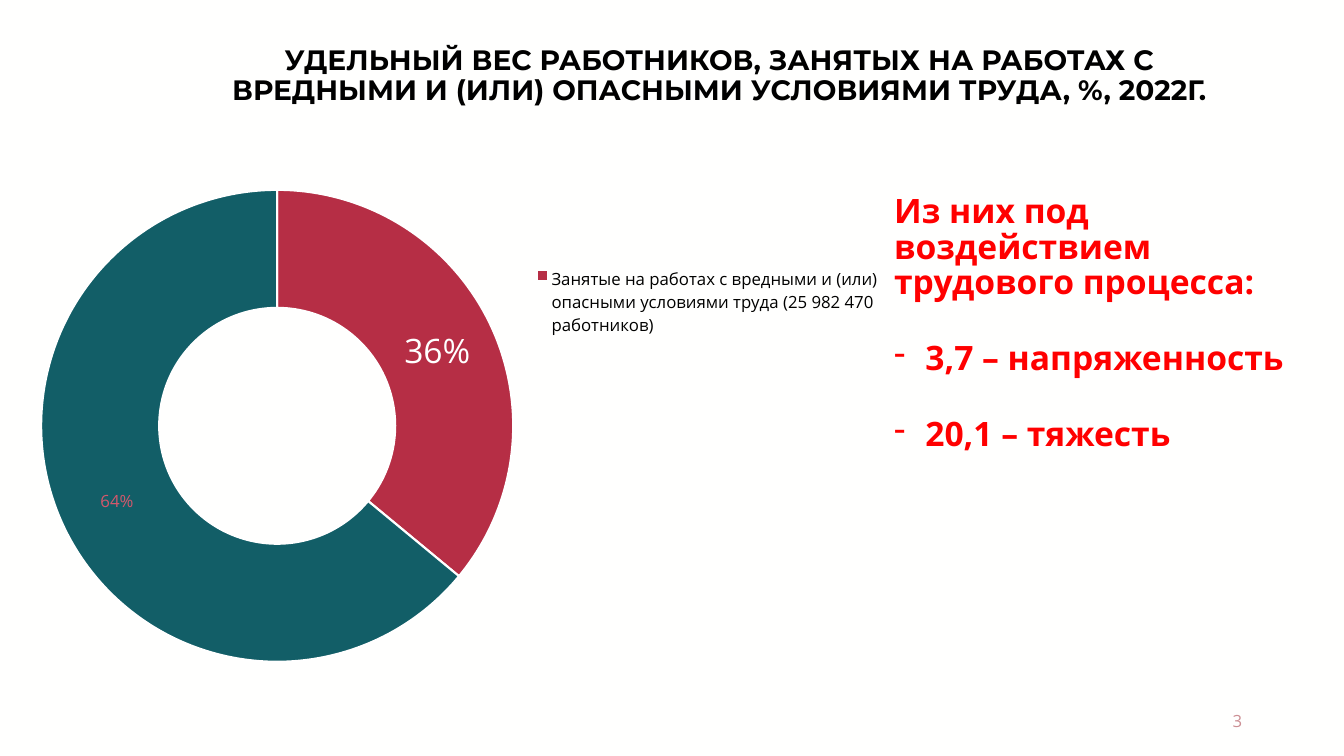
from lxml import etree
from pptx import Presentation
from pptx.chart.data import CategoryChartData
from pptx.dml.color import RGBColor
from pptx.enum.chart import XL_CHART_TYPE, XL_LEGEND_POSITION
from pptx.enum.text import MSO_ANCHOR, PP_ALIGN
from pptx.oxml import parse_xml
from pptx.oxml.ns import nsdecls, qn
from pptx.util import Inches, Pt

BACKGROUND = RGBColor(0xFF, 0xFF, 0xFE)
BLACK = RGBColor(0, 0, 0)
WHITE = RGBColor(0xFF, 0xFF, 0xFF)
RED = RGBColor(0xFF, 0, 0)
CRIMSON = RGBColor(0xB6, 0x2E, 0x45)
TEAL = RGBColor(0x12, 0x5E, 0x67)
ROSE = RGBColor(0xD4, 0x58, 0x6C)
PALE_ROSE = RGBColor(0xCC, 0x8F, 0x94)
BODY_FONT = "Open Sans"


def style(font, size, color, name=BODY_FONT, bold=False):
    font.size, font.name, font.bold = Pt(size), name, bold
    font.color.rgb = color


def chart_layout(x, y, w, h, inner=False):
    target = '<c:layoutTarget val="inner"/>' if inner else ""
    return parse_xml(
        f'<c:layout {nsdecls("c")}><c:manualLayout>{target}'
        '<c:xMode val="edge"/><c:yMode val="edge"/>'
        f'<c:x val="{x}"/><c:y val="{y}"/><c:w val="{w}"/><c:h val="{h}"/>'
        '</c:manualLayout></c:layout>')


prs = Presentation()
prs.slide_width, prs.slide_height = Inches(13.33), Inches(7.5)
slide = prs.slides.add_slide(prs.slide_layouts[5])
slide.background.fill.solid()
slide.background.fill.fore_color.rgb = BACKGROUND

# Title
title = slide.shapes.title
title.left, title.top = Inches(1.86), Inches(0.41)
title.width, title.height = Inches(10.55), Inches(0.67)
title.text_frame.text = ("УДЕЛЬНЫЙ ВЕС РАБОТНИКОВ, ЗАНЯТЫХ НА РАБОТАХ С ВРЕДНЫМИ "
                         "И (ИЛИ) ОПАСНЫМИ УСЛОВИЯМИ ТРУДА, %, 2022Г.")
title.text_frame.vertical_anchor = MSO_ANCHOR.TOP
heading = title.text_frame.paragraphs[0]
heading.alignment = PP_ALIGN.CENTER
heading.line_spacing = 0.9
style(heading.font, 20, BLACK, "Montserrat", True)

# Doughnut of worker shares
shares = CategoryChartData()
shares.categories = ["Занятые на работах с вредными и (или) опасными условиями "
                     "труда (25 982 470 работников)", ""]
shares.add_series("Series 1", (36, 64))
chart = slide.shapes.add_chart(
    XL_CHART_TYPE.DOUGHNUT, Inches(0.23), Inches(1.37),
    Inches(8.54), Inches(5.71), shares).chart
chart.has_title = False
style(chart.font, 10, CRIMSON)
plot = chart.plots[0]
plot.vary_by_categories = True
for hole in plot._element.iter(qn("c:holeSize")):
    hole.set("val", "50")
for index, color in enumerate((CRIMSON, TEAL)):
    sector = plot.series[0].points[index].format
    sector.fill.solid()
    sector.fill.fore_color.rgb = color
    sector.line.color.rgb = WHITE
    sector.line.width = Pt(1.5)

# Percent labels, the harmful share larger
labels = plot.series[0].data_labels
labels.show_percentage, labels.show_value = True, False
style(labels.font, 12, ROSE)
harmful_label = plot.series[0].points[0].data_label
style(harmful_label.font, 24, WHITE)
for tag, shown in (("c:showVal", "0"), ("c:showPercent", "1")):
    for flag in labels._element.iter(qn(tag)):
        flag.set("val", shown)

# Legend for the harmful share only
chart.has_legend = True
legend = chart.legend
legend.position = XL_LEGEND_POSITION.RIGHT
legend.include_in_layout = False
style(legend.font, 12, BLACK)
legend_position = legend._element.find(qn("c:legendPos"))
for layout in legend._element.findall(qn("c:layout")):
    legend._element.remove(layout)
legend_position.addnext(chart_layout(0.59, 0.21, 0.41, 0.15))
legend_position.addnext(parse_xml(
    f'<c:legendEntry {nsdecls("c")}><c:idx val="1"/><c:delete val="1"/></c:legendEntry>'))
plot_area = plot._element.getparent()
for layout in plot_area.findall(qn("c:layout")):
    plot_area.remove(layout)
plot_area.insert(0, chart_layout(0.02, 0.09, 0.55, 0.82, inner=True))

# Labour process factors
factors = slide.shapes.add_textbox(
    Inches(8.77), Inches(1.89), Inches(4.36), Inches(2.93)).text_frame
factors.word_wrap = True
factors.text = ("Из них под воздействием трудового процесса:\n"
                "3,7 – напряженность\n20,1 – тяжесть")
for index, paragraph in enumerate(factors.paragraphs):
    paragraph.line_spacing = 0.88
    style(paragraph.font, 24, RED, bold=True)
    if index:
        paragraph.space_before = Pt(29)
        properties = paragraph._p.get_or_add_pPr()
        properties.set("marL", str(Inches(0.31)))
        properties.set("indent", str(-Inches(0.31)))
        bullet = etree.Element(qn("a:buChar"), char="-")
        properties.find(qn("a:defRPr")).addprevious(bullet)

# Slide number
number = slide.shapes.add_textbox(
    Inches(9.42), Inches(6.95), Inches(3), Inches(0.4)).text_frame
number.word_wrap = True
number.vertical_anchor = MSO_ANCHOR.MIDDLE
number.text = "3"
number.paragraphs[0].alignment = PP_ALIGN.RIGHT
style(number.paragraphs[0].font, 12, PALE_ROSE)

prs.save("out.pptx")
